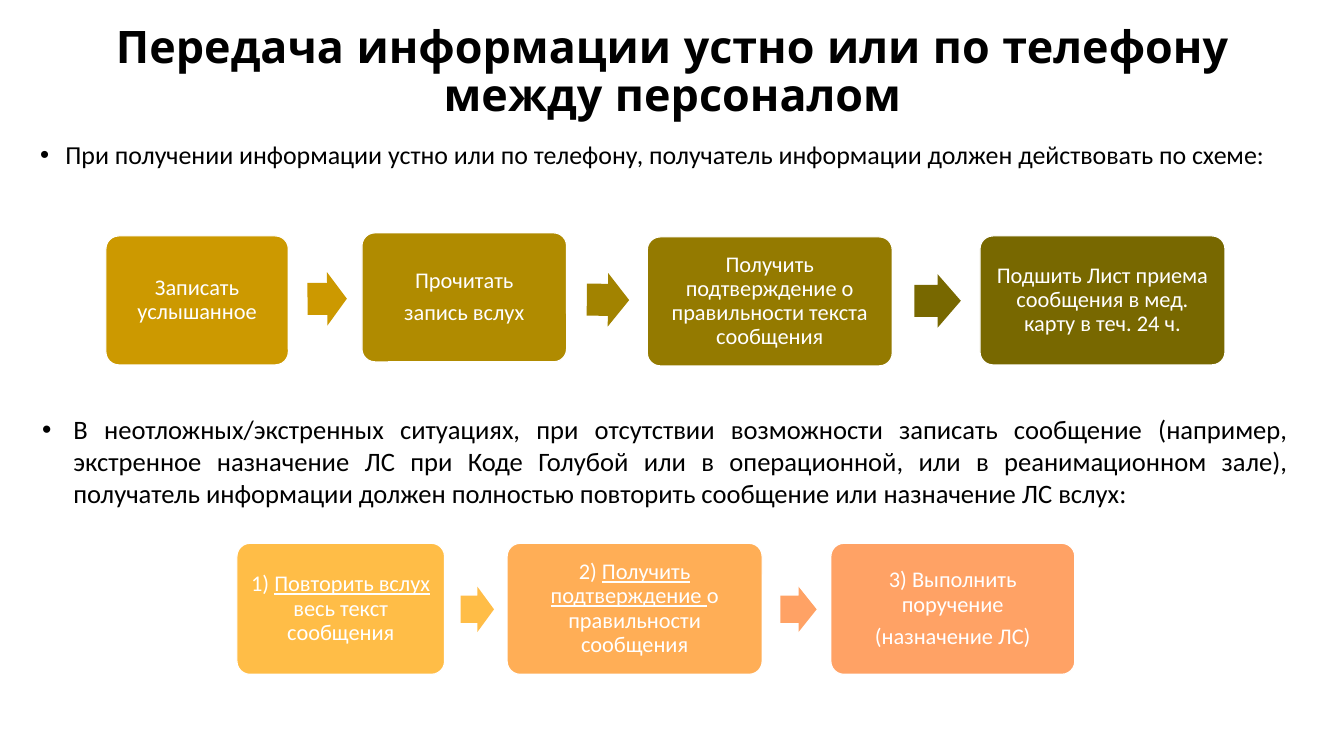
import pptx
import pptx.dml.color
import pptx.enum.shapes
import pptx.enum.text
import pptx.oxml
import pptx.oxml.ns
import pptx.util
from pptx.util import Inches

COLOURS = {
    "text": "000000", "white": "FFFFFF",
    "gold": "CC9900", "ochre": "B08B00", "bronze": "A28300",
    "olive": "947A00", "moss": "786800",
    "amber": "FFBD47", "apricot": "FFAE56", "peach": "FFA265",
}
ALIGN = pptx.enum.text.PP_ALIGN
ANCHOR = pptx.enum.text.MSO_ANCHOR
SHAPES = pptx.enum.shapes.MSO_SHAPE

# Boxes: left, top, width, colour, paragraphs made of (text, underlined) spans
WRITTEN_BOXES = [
    (1.05, 2.34, 1.81, "gold", [[("Записать услышанное", False)]]),
    (3.59, 2.31, 2.03, "ochre", [[("Прочитать", False)], [("запись вслух", False)]]),
    (6.42, 2.35, 2.43, "olive",
     [[("Получить подтверждение о правильности текста сообщения", False)]]),
    (9.72, 2.34, 2.43, "moss",
     [[("Подшить Лист приема сообщения в мед. карту в теч. 24 ч.", False)]]),
]
URGENT_BOXES = [
    (2.35, 5.39, 2.06, "amber",
     [[("1) ", False), ("Повторить вслух", True), (" весь текст сообщения", False)]]),
    (5.03, 5.39, 2.53, "apricot",
     [[("2) ", False), ("Получить подтверждение ", True),
       ("о правильности сообщения", False)]]),
    (8.24, 5.39, 2.42, "peach",
     [[("3) Выполнить поручение", False)], [("(назначение ЛС)", False)]]),
]
# Arrows: left, top, width, colour, rotation
WRITTEN_ARROWS = [
    (3.05, 2.7, 0.39, "gold", 359.5),
    (5.82, 2.71, 0.42, "bronze", 0.6),
    (9.07, 2.72, 0.46, "moss", 359.8),
]
URGENT_ARROWS = [
    (4.57, 5.82, 0.33, "amber", 0),
    (7.74, 5.82, 0.36, "peach", 0),
]


def rgb(colour):
    return pptx.dml.color.RGBColor.from_string(COLOURS[colour])


def set_font(para, size, colour, name="Calibri", bold=False):
    font = para.font
    font.name = name
    font.size = pptx.util.Pt(size)
    font.bold = bold
    font.color.rgb = rgb(colour)


def add_text(page, left, top, width, height, text, align):
    """Add a wrapping text box and return its frame and only paragraph."""
    box = page.shapes.add_textbox(
        Inches(left), Inches(top), Inches(width), Inches(height))
    frame = box.text_frame
    frame.word_wrap = True
    para = frame.paragraphs[0]
    para.text = text
    para.alignment = align
    return frame, para


def add_title(page, text):
    frame, para = add_text(page, 0.37, 0.18, 12.6, 1.09, text, ALIGN.CENTER)
    frame.vertical_anchor = ANCHOR.MIDDLE
    para.line_spacing = 0.9
    set_font(para, 32, "text", "Quicksand", True)


def add_bullet_text(page, left, top, width, height, text, size, indent, spacing):
    para = add_text(page, left, top, width, height, text, ALIGN.JUSTIFY)[1]
    para.line_spacing = spacing
    properties = para._p.get_or_add_pPr()
    properties.set("marL", str(Inches(indent)))
    properties.set("indent", str(-Inches(indent)))
    namespace = pptx.oxml.ns.nsdecls("a")
    for element in ('<a:buFont %s typeface="Arial"/>', '<a:buChar %s char="•"/>'):
        properties.append(pptx.oxml.parse_xml(element % namespace))
    set_font(para, size, "text")


def add_filled_shape(page, kind, left, top, width, height, colour):
    shape = page.shapes.add_shape(
        kind, Inches(left), Inches(top), Inches(width), Inches(height))
    shape.shadow.inherit = False
    shape.fill.solid()
    shape.fill.fore_color.rgb = rgb(colour)
    return shape


def add_step(page, left, top, width, height, colour, paragraphs):
    step = add_filled_shape(
        page, SHAPES.ROUNDED_RECTANGLE, left, top, width, height, colour)
    step.adjustments[0] = 0.1
    step.line.color.rgb = rgb("white")
    step.line.width = pptx.util.Pt(0.85)
    frame = step.text_frame
    frame.word_wrap = True
    frame.vertical_anchor = ANCHOR.MIDDLE
    frame.margin_left = frame.margin_right = Inches(0.07)
    frame.margin_top = frame.margin_bottom = Inches(0.07)
    for index, spans in enumerate(paragraphs):
        para = frame.add_paragraph() if index else frame.paragraphs[0]
        para.alignment = ALIGN.CENTER
        para.line_spacing = 0.9
        para.space_after = pptx.util.Pt(5.6)
        set_font(para, 16, "white")
        for text, underlined in spans:
            span = para.add_run()
            span.text = text
            if underlined:
                span.font.underline = True


def add_arrow(page, left, top, width, height, colour, rotation):
    arrow = add_filled_shape(
        page, SHAPES.RIGHT_ARROW, left, top, width, height, colour)
    arrow.adjustments[0] = 0.6
    arrow.adjustments[1] = 0.5
    arrow.line.fill.background()
    arrow.rotation = rotation


def add_flow(page, boxes, box_height, arrows, arrow_height):
    for left, top, width, colour, paragraphs in boxes:
        add_step(page, left, top, width, box_height, colour, paragraphs)
    for left, top, width, colour, rotation in arrows:
        add_arrow(page, left, top, width, arrow_height, colour, rotation)


def main():
    deck = pptx.Presentation()
    deck.slide_width = Inches(13.33)
    deck.slide_height = Inches(7.5)
    page = deck.slides.add_slide(deck.slide_layouts[6])

    add_title(page, "Передача информации устно или по телефону между персоналом")
    add_bullet_text(
        page, 0.3, 1.36, 12.71, 0.63,
        "При получении информации устно или по телефону, получатель информации "
        "должен действовать по схеме:", 18.5, 0.25, 0.9)
    add_flow(page, WRITTEN_BOXES, 1.28, WRITTEN_ARROWS, 0.53)
    add_bullet_text(
        page, 0.32, 4.05, 12.55, 1.06,
        "В неотложных/экстренных ситуациях, при отсутствии возможности записать "
        "сообщение (например, экстренное назначение ЛС при Коде Голубой или в "
        "операционной, или в реанимационном зале), получатель информации должен "
        "полностью повторить сообщение или назначение ЛС вслух:", 19, 0.31, 1.0)
    add_flow(page, URGENT_BOXES, 1.3, URGENT_ARROWS, 0.45)

    deck.save("out.pptx")


if __name__ == "__main__":
    main()
